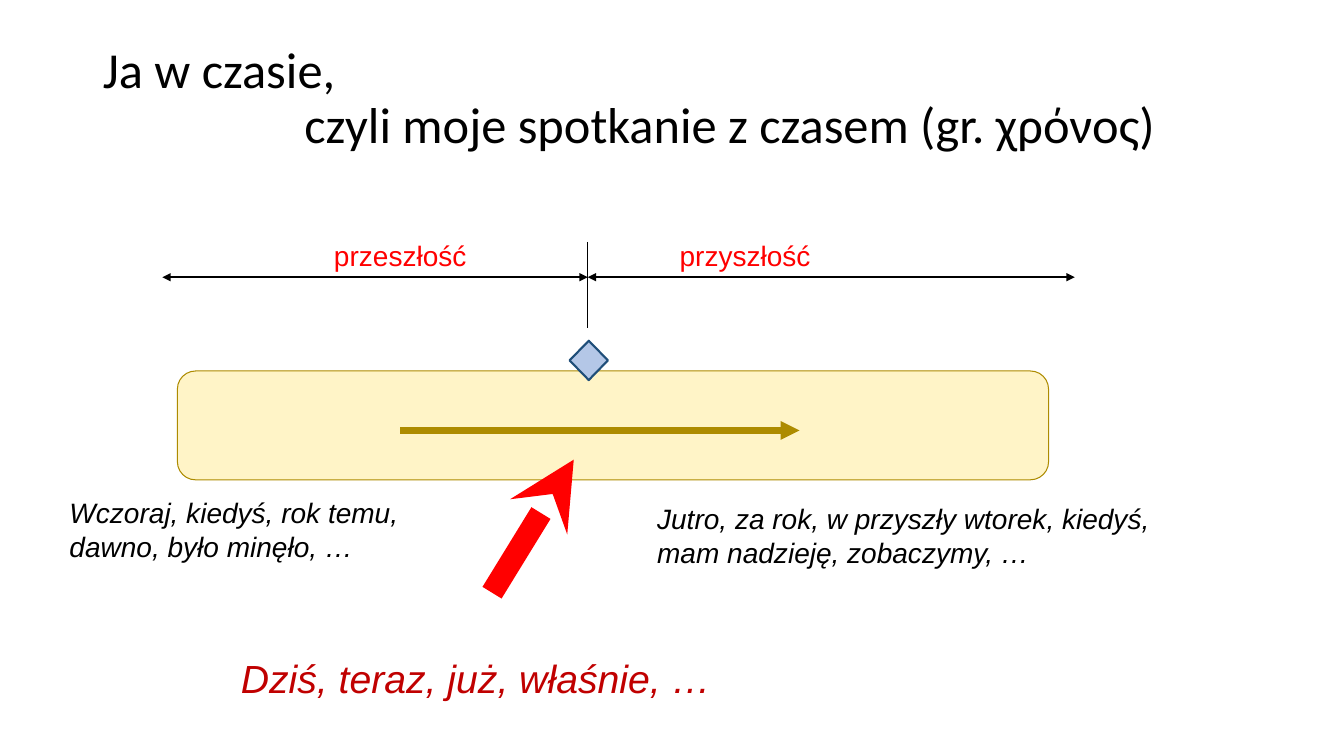
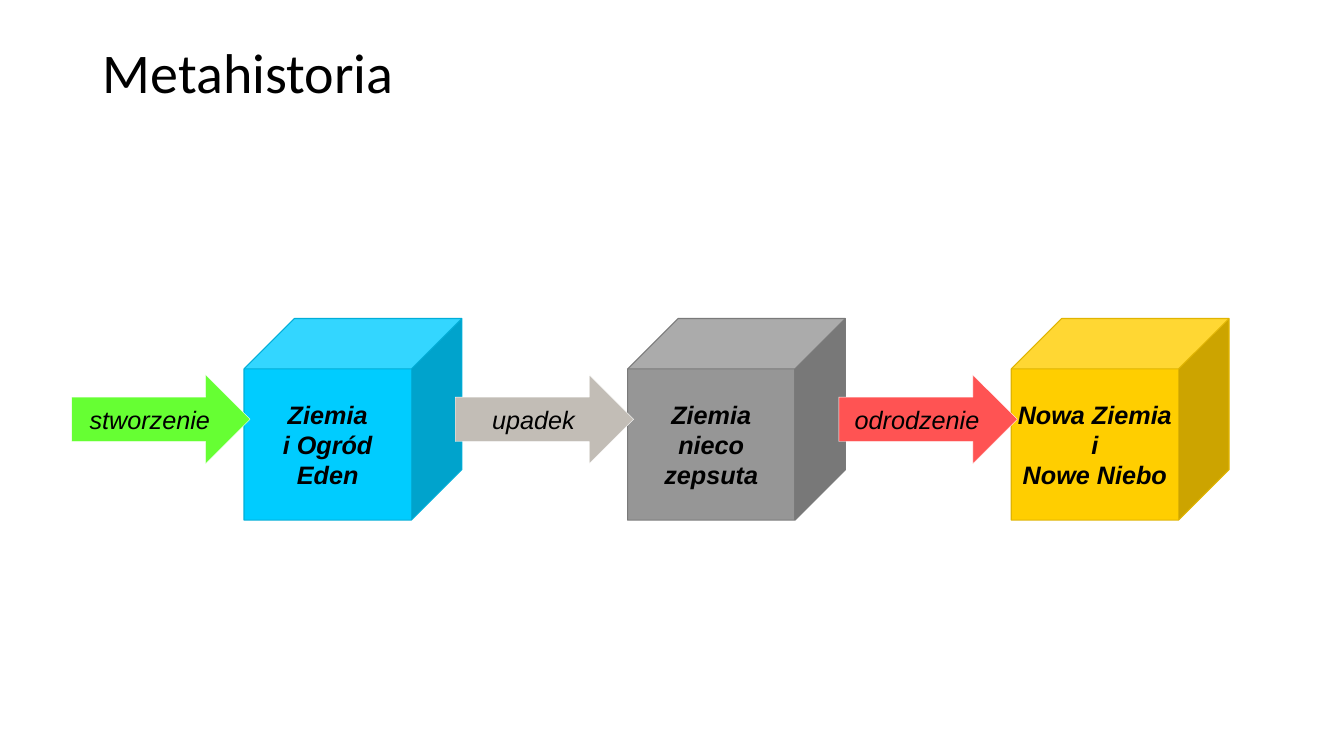
from dataclasses import dataclass

from lxml.etree import SubElement
from pptx import Presentation
from pptx.dml.color import RGBColor as RGB
from pptx.enum.shapes import MSO_CONNECTOR as LINK, MSO_SHAPE as SHAPE
from pptx.enum.text import MSO_ANCHOR as ANCHOR, MSO_AUTO_SIZE as FIT, PP_ALIGN as ALIGN
from pptx.oxml.ns import qn
from pptx.util import Inches, Pt


@dataclass(frozen=True)
class Theme:
    head: str = "Calibri"
    body: str = "Arial"
    ink: str = "000000"
    white: str = "FFFFFF"
    red: str = "FF0000"
    wine: str = "C00000"
    gold: str = "AD8B00"
    cream: str = "FFF4C7"
    sky: str = "B4C7E7"
    navy: str = "1F4E79"
    small: int = 18
    text: int = 20
    large: int = 28


@dataclass(frozen=True)
class Box:
    left: float
    top: float
    width: float
    height: float

    def point(self, x, y):
        """Turn percentages of this box into a place on the slide."""
        return (int(self.left + self.width * x / 100),
                int(self.top + self.height * y / 100))

    def inner(self, x, y, w, h):
        """Cut out an inner box, given in percentages of this one."""
        return Box(*self.point(x, y), int(self.width * w / 100), int(self.height * h / 100))

    def columns(self, count):
        return [self.inner(100 * i / count, 0, 100 / count, 100) for i in range(count)]

    @property
    def sides(self):
        return self.left, self.top, self.width, self.height


THEME = Theme()
PAGE = Box(0, 0, Inches(13.33), Inches(7.5))


def style(frame, size, color, font=THEME.body, bold=False, italic=False, align=ALIGN.LEFT):
    for par in frame.paragraphs:
        par.alignment = align
        for run in par.runs:
            run.font.name, run.font.size = font, Pt(size)
            run.font.bold, run.font.italic = bold, italic
            run.font.color.rgb = RGB.from_string(color)


def add_page(deck, title, size, height):
    slide = deck.slides.add_slide(deck.slide_layouts[5])
    head = slide.shapes.title
    box = PAGE.inner(6.9, 5.33, 86.27, height)
    head.left, head.top, head.width, head.height = box.sides
    frame = head.text_frame
    frame.text = title
    frame.auto_size, frame.vertical_anchor = FIT.NONE, ANCHOR.TOP
    style(frame, size, THEME.ink, THEME.head)
    for par in frame.paragraphs:
        par.line_spacing = 0.9
    for par in frame.paragraphs[1:]:
        par._p.get_or_add_pPr().set("marL", str(Inches(2)))
    return slide


def add_form(slide, kind, box, fill, edge, weight):
    form = slide.shapes.add_shape(kind, *box.sides)
    form.shadow.inherit = False
    form.fill.solid()
    form.fill.fore_color.rgb = RGB.from_string(fill)
    form.line.color.rgb = RGB.from_string(edge)
    form.line.width = Pt(weight)
    return form


def label(form, text, bold=False):
    frame = form.text_frame
    frame.text = text
    frame.word_wrap, frame.vertical_anchor = False, ANCHOR.MIDDLE
    style(frame, THEME.small, THEME.ink, bold=bold, italic=True, align=ALIGN.CENTER)


def add_note(slide, box, text, size, color, **look):
    frame = slide.shapes.add_textbox(*box.sides).text_frame
    frame.text, frame.word_wrap = text, True
    style(frame, size, color, **look)
    return frame


def add_line(slide, start, end, color, weight, head=None, tail=None):
    line = slide.shapes.add_connector(LINK.STRAIGHT, *start, *end)
    line.line.color.rgb = RGB.from_string(color)
    line.line.width = Pt(weight)
    props = line._element.spPr
    for tag, tip in (("a:headEnd", head), ("a:tailEnd", tail)):
        if tip:
            SubElement(props.find(qn("a:ln")), qn(tag), type=tip)
    SubElement(props, qn("a:effectLst"))


def draw_axis(slide, box):
    now, level = 46.63, 45.65
    for start, end, left, word in ((0, now, 18.12, "przeszłość"),
                                   (now, 100, 55.91, "przyszłość")):
        add_line(slide, box.point(start, level), box.point(end, level),
                 THEME.ink, 1.5, "triangle", "triangle")
        frame = add_note(slide, box.inner(left, 0, 15.91, 43.48), word,
                         THEME.text, THEME.red, align=ALIGN.CENTER)
        frame.vertical_anchor = ANCHOR.MIDDLE
        frame.margin_left = frame.margin_right = Inches(0.03)
        frame.margin_top = frame.margin_bottom = Inches(0.03)
    add_line(slide, box.point(now, 7.61), box.point(now, 100), THEME.ink, 0.5)


def draw_stream(slide, box):
    """Draw the band of time, its direction and the present moment."""
    add_form(slide, SHAPE.ROUNDED_RECTANGLE, box.inner(0, 21.74, 100, 78.26),
             THEME.cream, THEME.gold, 0.75)
    add_line(slide, box.point(25.58, 64.49), box.point(71.41, 64.49),
             THEME.gold, 4.5, tail="triangle")
    add_form(slide, SHAPE.DIAMOND, box.inner(45.02, 0, 4.4, 28.26),
             THEME.sky, THEME.navy, 1.5)


def draw_words(slide, box):
    """Place the sayings for past, future and present, and point at the present."""
    add_line(slide, box.point(36.61, 78.4), box.point(42.69, 60.8),
             THEME.red, 16, tail="stealth")
    for place, text, size, color in (
            ((4.43, 64.93, 29.48, 10.27), "Wczoraj, kiedyś, rok temu, dawno, było minęło, …",
             THEME.text, THEME.ink),
            ((48.16, 65.73, 42.46, 10.27),
             "Jutro, za rok, w przyszły wtorek, kiedyś, mam nadzieję, zobaczymy, …",
             THEME.text, THEME.ink),
            ((17.18, 85.87, 54.91, 7.6), "Dziś, teraz, już, właśnie, …",
             THEME.large, THEME.wine)):
        add_note(slide, box.inner(*place), text, size, color, italic=True)


def draw_flow(slide, box, stages):
    cells = box.columns(len(stages))
    for cell, (_, _, world, fill, edge) in zip(cells, stages):
        cube = add_form(slide, SHAPE.CUBE, cell.inner(44.94, 0, 56.77, 100), fill, edge, 0.75)
        label(cube, world, bold=True)
    for cell, (event, fill, *_) in zip(cells, stages):
        arrow = add_form(slide, SHAPE.RIGHT_ARROW, cell.inner(0, 28, 46.52, 44),
                         fill, THEME.white, 0.25)
        label(arrow, event)


def time_slide(deck):
    slide = add_page(deck, "Ja w czasie,\nczyli moje spotkanie z czasem (gr. χρόνος)", 36, 17.2)
    draw_stream(slide, PAGE.inner(13.2, 45.07, 64.82, 18.4))
    draw_axis(slide, PAGE.inner(12.08, 31.07, 67.89, 12.27))
    draw_words(slide, PAGE)


def story_slide(deck):
    slide = add_page(deck, "Metahistoria", 40, 10.4)
    draw_flow(slide, PAGE.inner(5.33, 42.13, 85.63, 26.67), (
        ("stworzenie", "66FF33", "Ziemia\ni Ogród\vEden", "00CCFF", "00AED8"),
        ("upadek", "C2BDB6", "Ziemia\vnieco\vzepsuta", "969696", "7A7A7A"),
        ("odrodzenie", "FF5353", "Nowa Ziemia\ni\nNowe Niebo", "FFCE00", "E0B400")))


def main():
    deck = Presentation()
    deck.slide_width, deck.slide_height = PAGE.width, PAGE.height
    time_slide(deck)
    story_slide(deck)
    deck.save("out.pptx")


if __name__ == "__main__":
    main()
